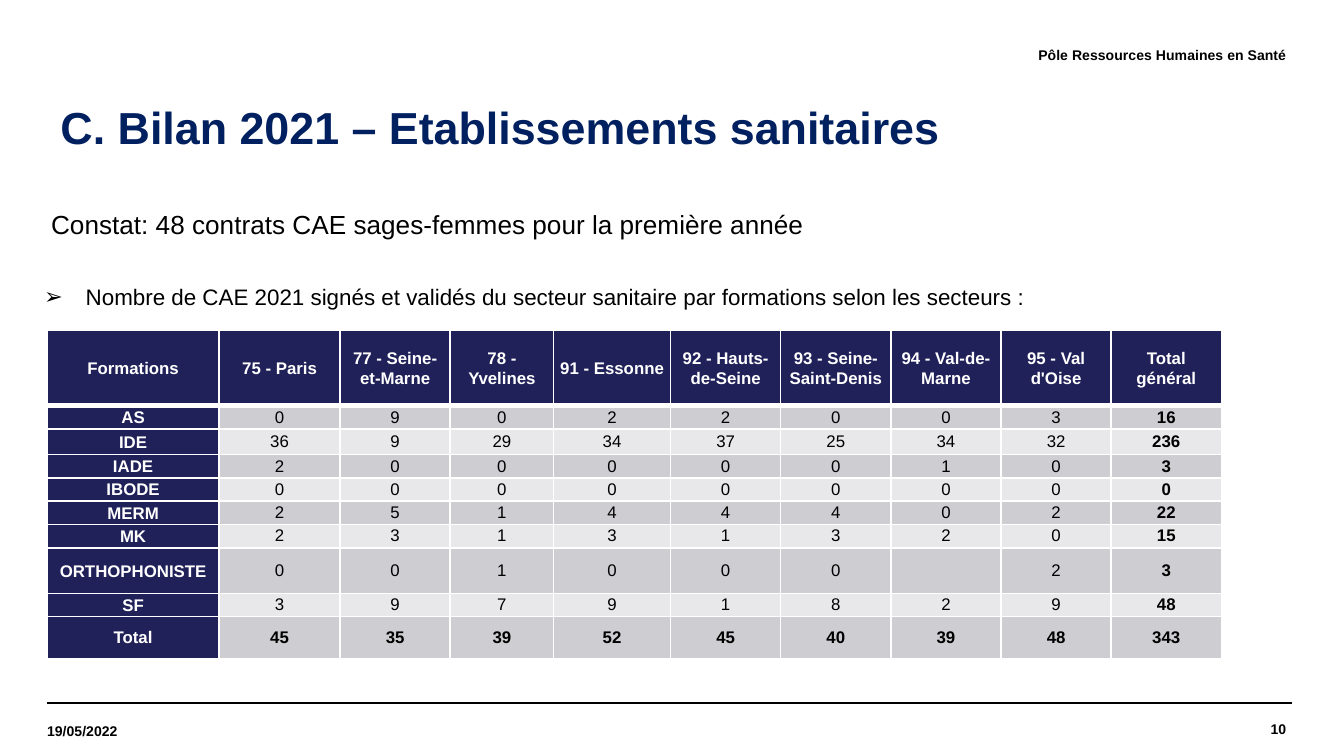
from lxml import etree
from pptx import Presentation
from pptx.dml.color import RGBColor
from pptx.enum.shapes import MSO_CONNECTOR
from pptx.enum.text import MSO_ANCHOR as ANCHOR, MSO_AUTO_SIZE as AUTO, PP_ALIGN as ALIGN
from pptx.oxml import parse_xml
from pptx.oxml.ns import nsdecls, qn
from pptx.util import Inches, Pt

BLACK = RGBColor(0x00, 0x00, 0x00)
WHITE = RGBColor(0xFF, 0xFF, 0xFF)
TITLE_BLUE = RGBColor(0x00, 0x20, 0x60)
NAVY = RGBColor(0x21, 0x21, 0x5A)
GREY = RGBColor(0xCD, 0xCD, 0xD2)
LIGHT_GREY = RGBColor(0xE8, 0xE8, 0xEA)


def write(frame, text, size=9, color=BLACK, bold=False, align=ALIGN.LEFT,
          line_spacing=1.0, space_after=0, bullet=None, left=0, indent=0):
    paragraph = frame.paragraphs[0]
    paragraph.alignment = align
    paragraph.line_spacing = line_spacing
    paragraph.space_before = Pt(0)
    paragraph.space_after = Pt(space_after)
    properties = paragraph._p.get_or_add_pPr()
    properties.set("marL", str(Inches(left)))
    properties.set("indent", str(Inches(indent)))
    if bullet:
        etree.SubElement(properties, qn("a:buFont"), typeface="Arial")
        etree.SubElement(properties, qn("a:buChar"), char=bullet)
    else:
        etree.SubElement(properties, qn("a:buNone"))
    if text:
        run = paragraph.add_run()
        run.text = text
        run.font.name = "Arial"
        run.font.size = Pt(size)
        run.font.bold = bold
        run.font.color.rgb = color


def place(shape, left, top, width, height, inset_x=0, inset_y=0, anchor=ANCHOR.TOP):
    shape.left, shape.top = Inches(left), Inches(top)
    shape.width, shape.height = Inches(width), Inches(height)
    frame = shape.text_frame
    frame.word_wrap = True
    frame.auto_size = AUTO.NONE
    frame.vertical_anchor = anchor
    frame.margin_left = frame.margin_right = Inches(inset_x)
    frame.margin_top = frame.margin_bottom = Inches(inset_y)
    return frame


# Widescreen 16:9 slide
prs = Presentation()
prs.slide_width = Inches(10)
prs.slide_height = Inches(10) * 9 // 16
slide = prs.slides.add_slide(prs.slide_layouts[1])

# Footer rule
for start in (0.35, 0.39):
    rule = slide.shapes.add_connector(MSO_CONNECTOR.STRAIGHT, Inches(start), Inches(5.23),
                                      Inches(start + 9.22), Inches(5.23))
    rule.line.color.rgb = BLACK
    rule.line.width = Pt(0.8)
    etree.SubElement(rule._element.spPr, qn("a:effectLst"))

# Page number, date and department
for text, box, align in (
    ("10", (8.09, 5.23, 1.48, 0.39), ALIGN.RIGHT),
    ("19/05/2022", (0.35, 5.25, 1.28, 0.38), ALIGN.LEFT),
    ("Pôle Ressources Humaines en Santé", (3.14, 0.21, 6.43, 0.39), ALIGN.RIGHT),
):
    margin_note = slide.shapes.add_textbox(0, 0, 0, 0)
    write(place(margin_note, *box, anchor=ANCHOR.MIDDLE), text, size=7.5, bold=True, align=align)

# Title and finding
heading = place(slide.shapes.title, 0.35, 0.69, 8.98, 0.5, 0.1, 0.05)
write(heading, "C. Bilan 2021 – Etablissements sanitaires", size=24, color=TITLE_BLUE, bold=True)
finding = place(slide.placeholders[1], 0.28, 1.55, 9.21, 3.68)
write(finding, "Constat: 48 contrats CAE sages-femmes pour la première année",
      size=14, space_after=5, left=0.1)

# Table caption
caption = place(slide.shapes.add_textbox(0, 0, 0, 0), 0.23, 2.06, 8.74, 0.3, 0.1, 0.05)
write(caption, "Nombre de CAE 2021 signés et validés du secteur sanitaire par formations "
      "selon les secteurs :", size=12, bullet="➢", left=0.31, indent=-0.31)

# Contracts by training and department
contracts = [
    ["Formations", "75 - Paris", "77 - Seine-et-Marne", "78 - Yvelines", "91 - Essonne",
     "92 - Hauts-de-Seine", "93 - Seine-Saint-Denis", "94 - Val-de-Marne",
     "95 - Val d'Oise", "Total général"],
    ["AS", 0, 9, 0, 2, 2, 0, 0, 3, 16],
    ["IDE", 36, 9, 29, 34, 37, 25, 34, 32, 236],
    ["IADE", 2, 0, 0, 0, 0, 0, 1, 0, 3],
    ["IBODE", 0, 0, 0, 0, 0, 0, 0, 0, 0],
    ["MERM", 2, 5, 1, 4, 4, 4, 0, 2, 22],
    ["MK", 2, 3, 1, 3, 1, 3, 2, 0, 15],
    ["ORTHOPHONISTE", 0, 0, 1, 0, 0, 0, "", 2, 3],
    ["SF", 3, 9, 7, 9, 1, 8, 2, 9, 48],
    ["Total", 45, 35, 39, 52, 45, 40, 39, 48, 343],
]
table_height = 2.44
column_widths = [1.28, 0.9, 0.82, 0.77, 0.87] + [0.82] * 5
tall_rows = {0: 0.56, 2: 0.19, 7: 0.34, 9: 0.31}
short_row = (table_height - sum(tall_rows.values())) / (len(contracts) - len(tall_rows))
last_row, last_column = len(contracts) - 1, len(column_widths) - 1

table = slide.shapes.add_table(len(contracts), len(column_widths), Inches(0.35), Inches(2.46),
                               Inches(8.74), Inches(table_height)).table
for column, width in zip(table.columns, column_widths):
    column.width = Inches(width)
for r, row in enumerate(table.rows):
    row.height = Inches(tall_rows.get(r, short_row))

for r, values in enumerate(contracts):
    for c, value in enumerate(values):
        cell = table.cell(r, c)
        is_header = r == 0 or c == 0
        cell.vertical_anchor = ANCHOR.MIDDLE
        cell.margin_left = cell.margin_right = Inches(0.04 if is_header else 0)
        cell.margin_top = cell.margin_bottom = 0

        # White borders, thicker under the header row
        for side in "LRTB":
            thick = (r, side) in ((0, "B"), (1, "T"))
            cell._tc.get_or_add_tcPr().append(parse_xml(
                f'<a:ln{side} {nsdecls("a")} w="{Pt(3 if thick else 1)}">'
                f'<a:solidFill><a:srgbClr val="{WHITE}"/></a:solidFill></a:ln{side}>'))

        cell.fill.solid()
        cell.fill.fore_color.rgb = NAVY if is_header else GREY if r % 2 else LIGHT_GREY
        write(cell.text_frame, str(value), color=WHITE if is_header else BLACK,
              bold=is_header or r == last_row or c == last_column, align=ALIGN.CENTER,
              line_spacing=1.07 if is_header else 1.0)

prs.save("out.pptx")
